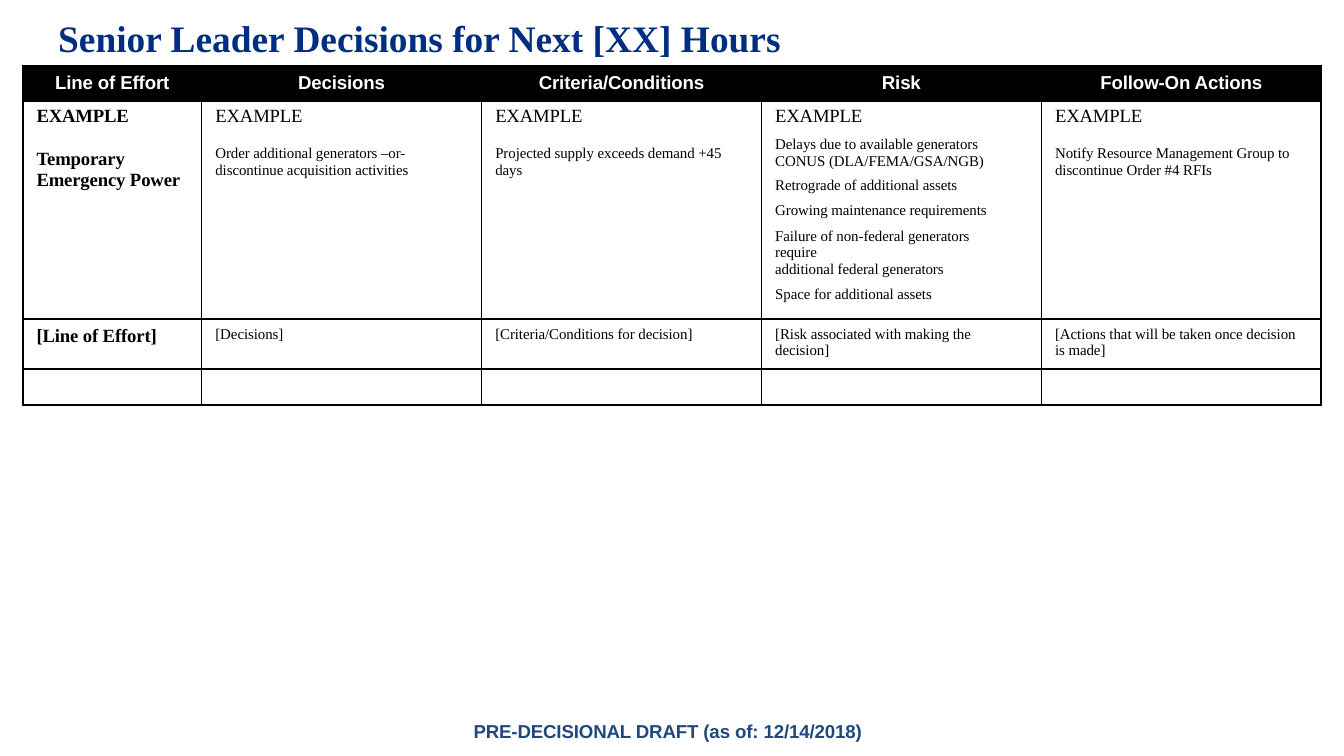
from lxml import etree
from pptx import Presentation
from pptx.dml.color import RGBColor
from pptx.enum.text import MSO_ANCHOR, PP_ALIGN
from pptx.oxml.ns import qn
from pptx.util import Cm, Pt

NAVY = RGBColor(0x00, 0x2E, 0x80)
BLUE = RGBColor(0x1F, 0x48, 0x7C)
BLACK = RGBColor(0x00, 0x00, 0x00)
WHITE = RGBColor(0xFF, 0xFF, 0xFF)
SERIF, SANS = "Times New Roman", "Arial"


def add_text(p, text, size, font, color, bold=False, tracking=0):
    """Add text as runs; a newline in it becomes a line break."""
    for i, line in enumerate(text.split("\n")):
        if i:
            p.add_line_break()
        r = p.add_run()
        r.text = line
        r.font.size, r.font.name, r.font.bold = Pt(size), font, bold
        r.font.color.rgb = color
        if tracking:
            r.font._element.set("spc", str(tracking))


def set_borders(cell):
    tc_pr = cell._tc.get_or_add_tcPr()
    for i, side in enumerate(("lnL", "lnR", "lnT", "lnB")):
        ln = etree.Element(qn(f"a:{side}"), w=str(Pt(1)))
        solid = etree.SubElement(ln, qn("a:solidFill"))
        etree.SubElement(solid, qn("a:srgbClr"), val=str(BLACK))
        tc_pr.insert(i, ln)


prs = Presentation()
prs.slide_width, prs.slide_height = Cm(25.4), Cm(14.29)
s = prs.slides.add_slide(prs.slide_layouts[5])

# Title and footer
title = s.shapes.title
title.left, title.top, title.width, title.height = Cm(1.1), Cm(0.18), Cm(13.9), Cm(0.92)
footer = s.shapes.add_textbox(Cm(8.95), Cm(13.6), Cm(7.5), Cm(0.46))
for sp in (title, footer):
    tf = sp.text_frame
    tf.margin_left = tf.margin_right = tf.margin_top = tf.margin_bottom = 0
    tf.word_wrap = True
    tf.vertical_anchor = MSO_ANCHOR.TOP
    tf.paragraphs[0].alignment = PP_ALIGN.LEFT
title.text_frame.margin_top = Cm(0.1)
add_text(title.text_frame.paragraphs[0], "Senior Leader Decisions for Next [XX] Hours",
         20, SERIF, NAVY, True)
add_text(footer.text_frame.paragraphs[0], "PRE-DECISIONAL DRAFT (as of: 12/14/2018)",
         10, SANS, BLUE, True, -5)

# Table content: each body paragraph is (text, size, space before, line spacing)
headers = ["Line of Effort", "Decisions", "Criteria/Conditions", "Risk", "Follow-On Actions"]
example = ("EXAMPLE", 10, 0, 1)
body = [
    [
        [example, ("Temporary\nEmergency Power", 10, 12, 1)],
        [example, ("Order additional generators –or-\ndiscontinue acquisition activities", 8, 9.7, 1)],
        [example, ("Projected supply exceeds demand +45\ndays", 8, 9.7, 1)],
        [example,
         ("Delays due to available generators\nCONUS (DLA/FEMA/GSA/NGB)", 8, 4.9, 1),
         ("Retrograde of additional assets\nGrowing maintenance requirements", 8, 0, 1.5),
         ("Failure of non-federal generators\nrequire", 8, 4.8, 1),
         ("additional federal generators", 8, 0, 1),
         ("Space for additional assets", 8, 4.8, 1)],
        [example, ("Notify Resource Management Group to\ndiscontinue Order #4 RFIs", 8, 9.7, 1)],
    ],
    [
        [("[Line of Effort]", 10, 0, 1)],
        [("[Decisions]", 8, 0, 1)],
        [("[Criteria/Conditions for decision]", 8, 0, 1)],
        [("[Risk associated with making the", 8, 0, 1), ("decision]", 8, 0, 1)],
        [("[Actions that will be taken once decision", 8, 0, 1), ("is made]", 8, 0, 1)],
    ],
    [[]] * 5,
]
col_widths = [3.38] + [5.29] * 4
row_heights = [0.66, 4.12, 0.94, 0.68]
top_margins = [0.13, 0.1, 0.13, 0]

table = s.shapes.add_table(len(row_heights), len(col_widths), Cm(0.43), Cm(1.25),
                           Cm(sum(col_widths)), Cm(sum(row_heights))).table
table.horz_banding = False
for col, width in zip(table.columns, col_widths):
    col.width = Cm(width)
for row, height, margin in zip(table.rows, row_heights, top_margins):
    row.height = Cm(height)
    for cell in row.cells:
        cell.margin_left = cell.margin_right = cell.margin_bottom = 0
        cell.margin_top = Cm(margin)
        cell.fill.solid()
        cell.fill.fore_color.rgb = WHITE
        set_borders(cell)

for c, header in enumerate(headers):
    cell = table.cell(0, c)
    cell.fill.fore_color.rgb = BLACK
    p = cell.text_frame.paragraphs[0]
    p.alignment = PP_ALIGN.CENTER
    add_text(p, header, 10, SANS, WHITE, True, -5)

for r, row in enumerate(body, start=1):
    for c, paragraphs in enumerate(row):
        cell = table.cell(r, c)
        cell.margin_left = Cm(0.26)
        tf = cell.text_frame
        if not paragraphs:
            tf.paragraphs[0]._p.get_or_add_endParaRPr().set("sz", "800")
        for i, (text, size, before, spacing) in enumerate(paragraphs):
            p = tf.add_paragraph() if i else tf.paragraphs[0]
            if before:
                p.space_before = Pt(before)
            p.line_spacing = float(spacing)
            add_text(p, text, size, SERIF, BLACK, c == 0, -5)

prs.save("out.pptx")
